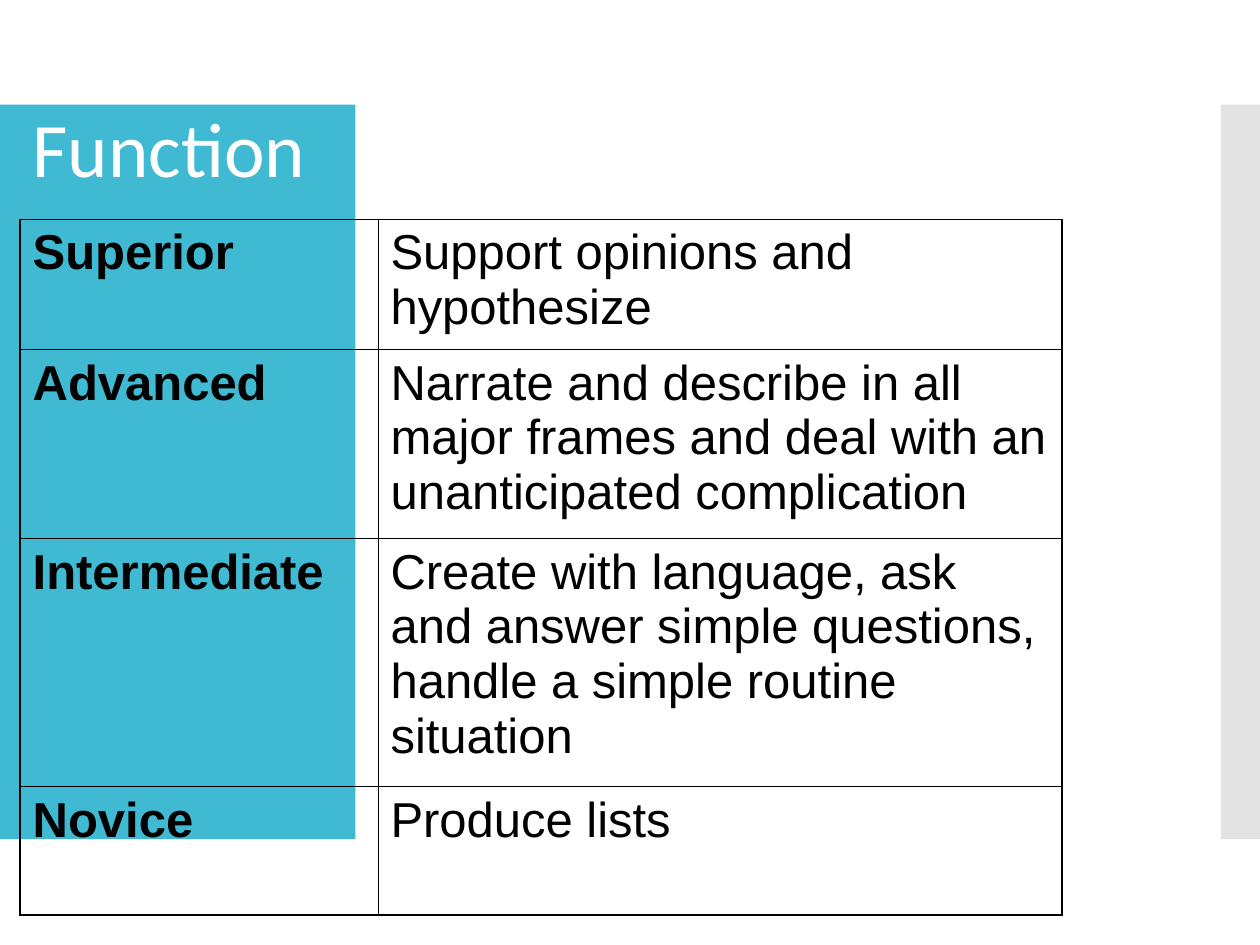
"""Build a slide with a table of language functions by proficiency level."""
from lxml.etree import SubElement
from pptx import Presentation
from pptx.dml.color import RGBColor as Rgb
from pptx.enum.shapes import MSO_SHAPE as Shape
from pptx.enum.text import MSO_ANCHOR as Anchor
from pptx.oxml.ns import qn
from pptx.util import Inches, Pt

TITLE = "Function"
LEVELS = [
    ("Superior", "Support opinions and hypothesize"),
    ("Advanced", "Narrate and describe in all major frames and deal with an "
                 "unanticipated complication"),
    ("Intermediate", "Create with language, ask and answer simple questions, "
                     "handle a simple routine situation"),
    ("Novice", "Produce lists"),
]
COLUMN_WIDTHS = [2.84, 5.43]
ROW_HEIGHTS = [1.02, 1.44, 1.84, 1.02]
COLORS = {"panel": "40BAD2", "strip": "C8C8C8", "title": "FFFFFF", "ink": "000000"}
OUTER_LINE, INNER_LINE = 1, 0.5


def add_block(slide, left, width, color, opacity=100):
    block = slide.shapes.add_shape(
        Shape.RECTANGLE, Inches(left), Inches(0.83), Inches(width), Inches(5.83))
    block.shadow.inherit = False
    block.line.fill.background()
    block.fill.solid()
    block.fill.fore_color.rgb = Rgb.from_string(COLORS[color])
    if opacity < 100:
        fill_color = block.fill._xPr.find(qn("a:solidFill"))[0]
        SubElement(fill_color, qn("a:alpha"), val=str(opacity * 1000))


def add_text(para, text, font, size, color, bold=False):
    span = para.add_run()
    span.text = text
    span.font.name = font
    span.font.size = Pt(size)
    span.font.bold = bold
    span.font.color.rgb = Rgb.from_string(COLORS[color])


def add_title(slide):
    box = slide.shapes.add_textbox(Inches(0.16), Inches(-0.35), Inches(3.23), Inches(3.12))
    frame = box.text_frame
    frame.word_wrap = True
    frame.vertical_anchor = Anchor.MIDDLE
    para = frame.paragraphs[0]
    para.line_spacing = 0.9
    add_text(para, TITLE, "Calibri", 44, "title")


def set_borders(cell, outer_sides):
    properties = cell._tc.get_or_add_tcPr()
    for index, side in enumerate(("lnL", "lnR", "lnT", "lnB")):
        width = OUTER_LINE if side in outer_sides else INNER_LINE
        line = properties.makeelement(qn(f"a:{side}"), {"w": str(Pt(width))})
        fill = SubElement(line, qn("a:solidFill"))
        SubElement(fill, qn("a:srgbClr"), val=COLORS["ink"])
        properties.insert(index, line)


def add_levels(slide):
    table = slide.shapes.add_table(
        len(LEVELS), len(COLUMN_WIDTHS), Inches(0.16), Inches(1.74),
        Inches(sum(COLUMN_WIDTHS)), Inches(sum(ROW_HEIGHTS))).table
    table.first_row = table.horz_banding = False
    for column, width in zip(table.columns, COLUMN_WIDTHS):
        column.width = Inches(width)
    for row, height in zip(table.rows, ROW_HEIGHTS):
        row.height = Inches(height)
    for r, texts in enumerate(LEVELS):
        for c, text in enumerate(texts):
            cell = table.cell(r, c)
            cell.fill.background()
            add_text(cell.text_frame.paragraphs[0], text, "Arial", 28, "ink", bold=c == 0)
            edges = {"lnL": c == 0, "lnR": c == len(COLUMN_WIDTHS) - 1,
                     "lnT": r == 0, "lnB": r == len(LEVELS) - 1}
            set_borders(cell, [side for side, is_outer in edges.items() if is_outer])


def main():
    deck = Presentation()
    deck.slide_width, deck.slide_height = Inches(10), Inches(7.5)
    slide = deck.slides.add_slide(deck.slide_layouts[6])
    add_block(slide, 0, 2.82, "panel")
    add_block(slide, 9.69, 0.32, "strip", opacity=50)
    add_title(slide)
    add_levels(slide)
    deck.save("out.pptx")


if __name__ == "__main__":
    main()
